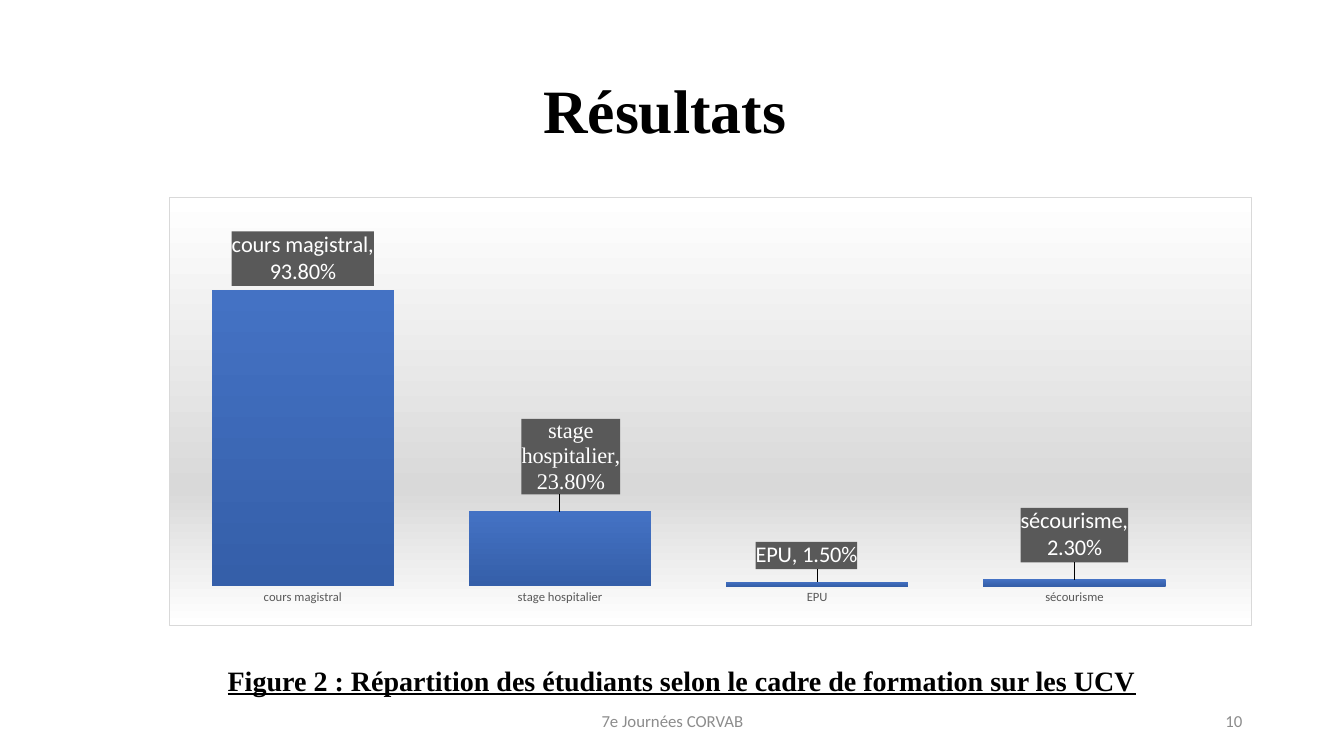
from dataclasses import dataclass

from lxml import etree
from pptx import Presentation
from pptx.chart.data import CategoryChartData
from pptx.dml.color import RGBColor
from pptx.enum.chart import XL_CHART_TYPE, XL_TICK_MARK
from pptx.enum.text import MSO_ANCHOR, PP_ALIGN
from pptx.oxml.ns import qn
from pptx.util import Inches, Pt

COLUMNS = XL_CHART_TYPE.COLUMN_CLUSTERED
NO_TICK = XL_TICK_MARK.NONE
LEFT, CENTER, RIGHT = PP_ALIGN.LEFT, PP_ALIGN.CENTER, PP_ALIGN.RIGHT
TOP, MIDDLE = MSO_ANCHOR.TOP, MSO_ANCHOR.MIDDLE
NAMESPACES = (
    'xmlns:c="http://schemas.openxmlformats.org/drawingml/2006/chart" '
    'xmlns:a="http://schemas.openxmlformats.org/drawingml/2006/main"'
)


@dataclass(frozen=True)
class Theme:
    serif: str = "Times New Roman"
    sans: str = "Calibri"
    ink: str = "000000"
    muted: str = "8C8C8C"
    axis: str = "595959"
    label: str = "FFFFFF"
    label_fill: str = "595959"
    border: str = "D9D9D9"
    backdrop: tuple = ((0, "FFFFFF"), (68, "D9D9D9"), (100, "FFFFFF"))
    columns: tuple = ((0, "4472C4"), (100, "355FA9"))
    title_size: int = 44
    caption_size: int = 20
    label_size: int = 16
    footer_size: int = 12
    chart_size: int = 10
    axis_size: int = 9


def format_font(font, size, color, name, bold=False, underline=False):
    font.size = Pt(size)
    font.name = name
    font.bold = bold
    font.underline = underline
    font.color.rgb = RGBColor.from_string(color)


def write_text(frame, text, align=LEFT, anchor=TOP, spacing=1.0, **style):
    frame.word_wrap = True
    frame.vertical_anchor = anchor
    para = frame.paragraphs[0]
    para.alignment = align
    para.line_spacing = spacing
    span = para.add_run()
    span.text = text
    format_font(span.font, **style)


def chart_xml(tag, body):
    return etree.fromstring(f"<c:{tag} {NAMESPACES}>{body}</c:{tag}>")


def solid(color):
    return f'<a:solidFill><a:srgbClr val="{color}"/></a:solidFill>'


def gradient(stops):
    points = "".join(
        f'<a:gs pos="{place * 1000}"><a:srgbClr val="{color}"/></a:gs>' for place, color in stops
    )
    return f'<a:gradFill><a:gsLst>{points}</a:gsLst><a:lin ang="5400000" scaled="0"/></a:gradFill>'


def manual_layout(**values):
    items = "".join(f'<c:{key} val="{value}"/>' for key, value in values.items())
    return f"<c:manualLayout>{items}</c:manualLayout>"


class SlideBuilder:
    def __init__(self, deck, theme):
        self.theme = theme
        self.page = deck.slides.add_slide(deck.slide_layouts[5])

    def title(self, text, left, top, width, height):
        box = self.page.shapes.title
        box.left, box.top, box.width, box.height = map(Inches, (left, top, width, height))
        write_text(box.text_frame, text, align=CENTER, anchor=MIDDLE, spacing=0.9,
                   size=self.theme.title_size, color=self.theme.ink,
                   name=self.theme.serif, bold=True)

    def text(self, text, left, top, width, height, **style):
        box = self.page.shapes.add_textbox(*map(Inches, (left, top, width, height)))
        write_text(box.text_frame, text, **style)

    def footer(self, text, left, width, align):
        self.text(text, left, 6.95, width, 0.4, align=align, anchor=MIDDLE,
                  size=self.theme.footer_size, color=self.theme.muted, name=self.theme.sans)

    def label_format(self, font):
        theme = self.theme
        return (
            '<c:numFmt formatCode="0.00%" sourceLinked="0"/>'
            f"<c:spPr>{solid(theme.label_fill)}</c:spPr>"
            f'<c:txPr><a:bodyPr/><a:p><a:pPr><a:defRPr sz="{theme.label_size * 100}" b="0">'
            f'{solid(theme.label)}<a:latin typeface="{font}"/></a:defRPr></a:pPr>'
            '<a:endParaRPr lang="fr-FR"/></a:p></c:txPr>'
            '<c:dLblPos val="outEnd"/><c:showLegendKey val="0"/><c:showVal val="1"/>'
            '<c:showCatName val="1"/><c:showSerName val="0"/><c:showPercent val="0"/>'
            '<c:showBubbleSize val="0"/><c:separator>, </c:separator>'
        )

    def data_labels(self, labels):
        points = "".join(
            f'<c:dLbl><c:idx val="{index}"/><c:layout>{manual_layout(x=x, y=y)}</c:layout>'
            f"{self.label_format(font)}</c:dLbl>"
            for index, (x, y, font) in enumerate(labels)
        )
        return chart_xml("dLbls", points + self.label_format(self.theme.sans))

    def column_chart(self, values, labels, left, top, width, height):
        theme = self.theme
        data = CategoryChartData(number_format="0.00%")
        data.categories = list(values)
        data.add_series("Series 1", list(values.values()))
        frame = self.page.shapes.add_chart(COLUMNS, *map(Inches, (left, top, width, height)), data)
        chart = frame.chart
        chart.has_title = False
        chart.has_legend = False
        format_font(chart.font, theme.chart_size, theme.ink, theme.sans)

        category_axis = chart.category_axis
        category_axis.major_tick_mark = NO_TICK
        category_axis.minor_tick_mark = NO_TICK
        category_axis.format.line.fill.background()
        format_font(category_axis.tick_labels.font, theme.axis_size, theme.axis, theme.sans)
        value_axis = chart.value_axis
        value_axis.minimum_scale, value_axis.maximum_scale = 0, 1
        value_axis.has_major_gridlines = False
        value_axis.visible = False

        plot = chart.plots[0]
        plot.gap_width = 41
        plot.vary_by_categories = False
        series = plot.series[0]
        series.invert_if_negative = False
        series_xml = series._element
        series_xml.find(qn("c:tx")).addnext(chart_xml("spPr", gradient(theme.columns)))
        series_xml.find(qn("c:cat")).addprevious(self.data_labels(labels))

        chart_body = chart._chartSpace.find(qn("c:chart"))
        border = f'<a:ln w="{Pt(0.75)}">{solid(theme.border)}</a:ln>'
        chart_body.addnext(chart_xml("spPr", gradient(theme.backdrop) + border))
        plot_area = chart_body.find(qn("c:plotArea"))
        for layout in plot_area.findall(qn("c:layout")):
            plot_area.remove(layout)
        plot_area.insert(0, chart_xml("layout", manual_layout(
            layoutTarget="inner", xMode="edge", yMode="edge", x=0.004, y=0.171, w=0.951, h=0.738)))


def main():
    deck = Presentation()
    deck.slide_width, deck.slide_height = Inches(13.33), Inches(7.5)
    theme = Theme()
    slide = SlideBuilder(deck, theme)
    slide.title("Résultats ", 0.92, 0.4, 11.5, 1.45)
    slide.column_chart(
        {"cours magistral": 0.938, "stage hospitalier": 0.238, "EPU": 0.015, "sécourisme": 0.023},
        [(0, 0, theme.sans), (0.01, -0.03, theme.serif),
         (-0.01, -0.02, theme.sans), (0, -0.03, theme.sans)],
        1.68, 1.95, 10.74, 4.26)
    slide.text("Figure 2 : Répartition des étudiants selon le cadre de formation sur les UCV",
               2.16, 6.53, 9.37, 0.44, size=theme.caption_size, color=theme.ink,
               name=theme.serif, bold=True, underline=True)
    slide.footer("10", 9.42, 3, RIGHT)
    slide.footer("7e Journées CORVAB", 4.42, 4.5, CENTER)
    deck.save("out.pptx")


if __name__ == "__main__":
    main()
